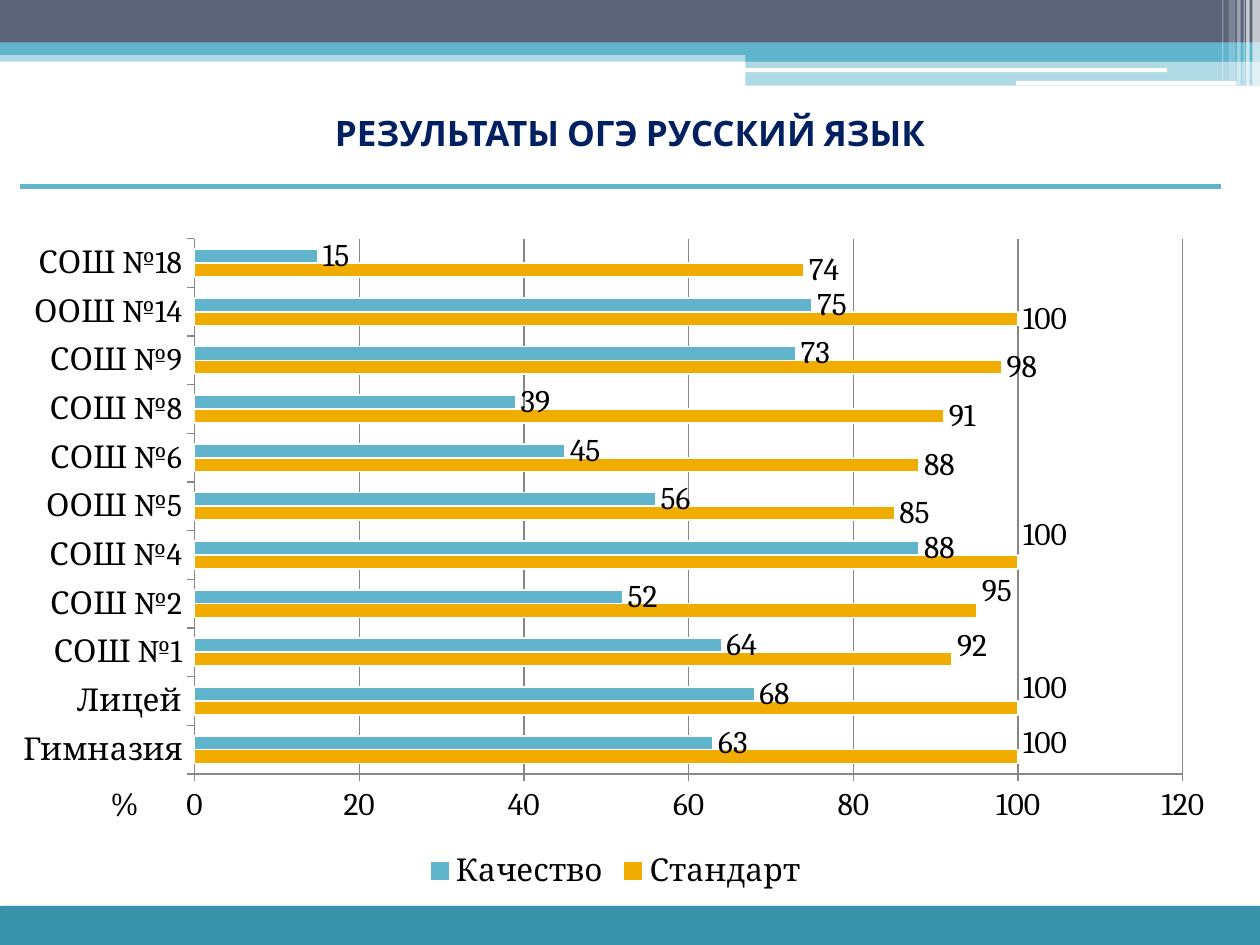
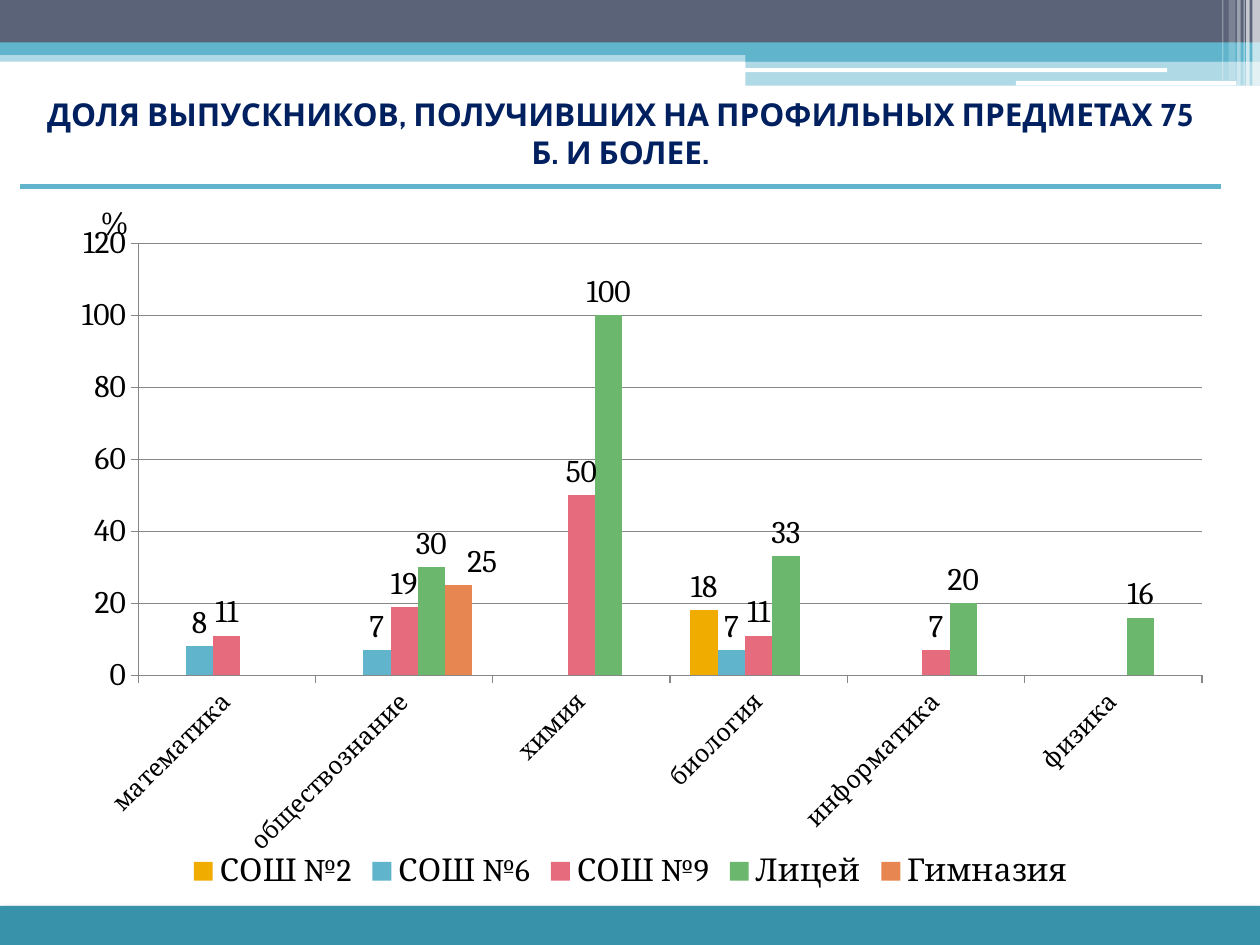
from pptx import Presentation
from pptx.chart.data import CategoryChartData
from pptx.enum.chart import XL_CHART_TYPE, XL_LABEL_POSITION, XL_LEGEND_POSITION, XL_TICK_MARK
from pptx.enum.shapes import MSO_CONNECTOR, MSO_SHAPE
from pptx.enum.text import MSO_ANCHOR, MSO_AUTO_SIZE, PP_ALIGN
from pptx.dml.color import RGBColor
from pptx.oxml import parse_xml
from pptx.oxml.ns import nsdecls, qn
from pptx.util import Pt

WHITE, BLACK, NAVY, GRAY = "FFFFFF", "000000", "002060", "878787"
SLATE, AQUA, TEAL = "5A6378", "60B5CC", "3792AA"
AMBER, PINK, GREEN, ORANGE = "F0AD00", "E66C7D", "6BB76D", "E88651"
TITLE_FONT, CHART_FONT = "Cabin", "Cambria"


def paint(fill, color):
    fill.solid()
    fill.fore_color.rgb = RGBColor.from_string(color)


def manual_layout(inner=False, **places):
    parts = '<c:layoutTarget val="inner"/><c:xMode val="edge"/><c:yMode val="edge"/>' if inner else ""
    parts += "".join(f'<c:{name} val="{value}"/>' for name, value in places.items())
    return parse_xml(f'<c:layout {nsdecls("c")}><c:manualLayout>{parts}</c:manualLayout></c:layout>')


deck = Presentation()
deck.slide_width, deck.slide_height = Pt(720), Pt(540)
title_only = deck.slide_layouts[5]

bands = [
    (MSO_SHAPE.RECTANGLE, 0, 28.8, 720, 6.5, AQUA, 50),
    (MSO_SHAPE.RECTANGLE, 0, 0, 720, 24.5, SLATE, 100),
    (MSO_SHAPE.RECTANGLE, 0, 24.2, 720, 7.2, AQUA, 100),
    (MSO_SHAPE.RECTANGLE, 426, 28, 294, 7.2, AQUA, 100),
    (MSO_SHAPE.RECTANGLE, 426, 35, 294, 14, AQUA, 50),
    (MSO_SHAPE.ROUNDED_RECTANGLE, 425.5, 39, 241.5, 2.2, WHITE, 100),
    (MSO_SHAPE.ROUNDED_RECTANGLE, 580.5, 46.2, 126, 2.6, WHITE, 100),
    (MSO_SHAPE.RECTANGLE, 0, 517.7, 720, 22.3, TEAL, 100),
]
strips = [(715.7, 4.3, 49, 65), (712.1, 2, 49, 65), (710.6, 0.7, 49, 60),
          (707, 2, 49, 40), (702, 4, 46, 20), (698.4, 0.7, 46, 30)]
bands[7:7] = [(MSO_SHAPE.RECTANGLE, left, 0, width, height, WHITE, alpha)
              for left, width, height, alpha in strips]

schools = ["Гимназия", "Лицей", "СОШ №1", "СОШ №2", "СОШ №4", "ООШ №5",
           "СОШ №6", "СОШ №8", "СОШ №9", "ООШ №14", "СОШ №18"]
subjects = ["математика", "обществознание", "химия", "биология", "информатика", "физика"]

slides = [
    {
        "title": "РЕЗУЛЬТАТЫ ОГЭ РУССКИЙ ЯЗЫК",
        "title_size": 20,
        "title_place": (0, 34, 720, 84),
        "kind": XL_CHART_TYPE.BAR_CLUSTERED,
        "chart_place": (0, 129.6, 703.4, 382.3),
        "plot": {"x": 0.158, "y": 0.018, "w": 0.803, "h": 0.8},
        "category_size": 18,
        "categories": schools,
        "series": [
            ("Стандарт", AMBER, [100, 100, 92, 95, 100, 85, 88, 91, 98, 100, 74]),
            ("Качество", AQUA, [63, 68, 64, 52, 88, 56, 45, 39, 73, 75, 15]),
        ],
        "moved_labels": [(0, 0, 0, -0.02), (0, 1, 0, -0.03), (0, 2, 0, -0.02),
                         (0, 3, 0, -0.03), (0, 4, 0, -0.04)],
        "percent_place": (56.2, 444.2, 28, 29),
    },
    {
        "title": "ДОЛЯ ВЫПУСКНИКОВ, ПОЛУЧИВШИХ НА ПРОФИЛЬНЫХ ПРЕДМЕТАХ 75 Б. И БОЛЕЕ.",
        "title_size": 18,
        "title_place": (11.5, 34, 686, 84),
        "kind": XL_CHART_TYPE.COLUMN_CLUSTERED,
        "chart_place": (22.3, 106.6, 675.4, 405.4),
        "plot": {"x": 0.084, "y": 0.08, "w": 0.9, "h": 0.609},
        "category_size": 14,
        "categories": subjects,
        "series": [
            ("СОШ №2", AMBER, [None, None, None, 18, None, None]),
            ("СОШ №6", AQUA, [8, 7, None, 7, None, None]),
            ("СОШ №9", PINK, [11, 19, 50, 11, 7, None]),
            ("Лицей", GREEN, [None, 30, 100, 33, 20, 16]),
            ("Гимназия", ORANGE, [None, 25, None, None, None, None]),
        ],
        "moved_labels": [(4, 1, 0.02, 0)],
        "percent_place": (50.4, 112.3, 40, 29),
    },
]

for content in slides:
    page = deck.slides.add_slide(title_only)

    if len(deck.slides) == 1:
        for number, (preset, left, top, width, height, color, alpha) in enumerate(bands):
            band = page.shapes.add_shape(preset, Pt(left), Pt(top), Pt(width), Pt(height))
            band.shadow.inherit = False
            band.line.fill.background()
            paint(band.fill, color)
            if alpha < 100:
                tint = band.element.xpath("./p:spPr/a:solidFill/a:srgbClr")[0]
                tint.append(parse_xml(f'<a:alpha {nsdecls("a")} val="{alpha * 1000}"/>'))
            if color == TEAL:
                band.element.spPr.find(qn("a:effectLst")).append(parse_xml(
                    f'<a:outerShdw {nsdecls("a")} blurRad="{Pt(4)}" dist="{Pt(2)}" dir="5400000">'
                    f'<a:srgbClr val="{BLACK}"><a:alpha val="45000"/></a:srgbClr></a:outerShdw>'))
            band.element.nvSpPr.cNvPr.id = 20 + number
            deck.slide_master.shapes.element.append(band.element)

    rule = page.shapes.add_connector(MSO_CONNECTOR.STRAIGHT, Pt(11.5), Pt(106.6), Pt(697.7), Pt(106.6))
    paint(rule.line.fill, AQUA)
    rule.line.width = Pt(3)
    rule.element.spPr.append(parse_xml(f'<a:effectLst {nsdecls("a")}/>'))

    title = page.shapes.title
    title.left, title.top, title.width, title.height = map(Pt, content["title_place"])
    title.text_frame.text = content["title"]
    title.text_frame.auto_size = MSO_AUTO_SIZE.NONE
    title.text_frame.vertical_anchor = MSO_ANCHOR.MIDDLE
    para = title.text_frame.paragraphs[0]
    para.alignment = PP_ALIGN.CENTER
    span = para.runs[0]
    span.font.name, span.font.size, span.font.bold = TITLE_FONT, Pt(content["title_size"]), True
    paint(span.font.fill, NAVY)

    data = CategoryChartData()
    data.categories = content["categories"]
    for name, color, values in content["series"]:
        data.add_series(name, values)
    chart = page.shapes.add_chart(content["kind"], *map(Pt, content["chart_place"]), data).chart
    chart.has_title = False
    chart.font.name, chart.font.size = CHART_FONT, Pt(18)
    paint(chart.font.fill, BLACK)
    chart.has_legend = True
    chart.legend.position = XL_LEGEND_POSITION.BOTTOM
    chart.legend.include_in_layout = False

    plot_area = chart.element.xpath("./c:chart/c:plotArea")[0]
    for automatic in plot_area.findall(qn("c:layout")):
        plot_area.remove(automatic)
    plot_area.insert(0, manual_layout(inner=True, **content["plot"]))

    for axis in (chart.category_axis, chart.value_axis):
        axis.major_tick_mark = XL_TICK_MARK.OUTSIDE
        axis.minor_tick_mark = XL_TICK_MARK.NONE
        paint(axis.format.line.fill, GRAY)
        axis.format.line.width = Pt(0.75)
    chart.category_axis.tick_labels.font.size = Pt(content["category_size"])
    chart.value_axis.minimum_scale = 0
    chart.value_axis.maximum_scale = 120
    chart.value_axis.major_unit = 20
    gridline = chart.value_axis.major_gridlines.format.line
    paint(gridline.fill, GRAY)
    gridline.width = Pt(0.75)

    plot = chart.plots[0]
    plot.vary_by_categories = False
    plot.gap_width, plot.overlap = 150, 0
    for series, (name, color, values) in zip(plot.series, content["series"]):
        paint(series.format.fill, color)
        series.data_labels.show_value = True
        series.data_labels.position = XL_LABEL_POSITION.OUTSIDE_END
        if content["kind"] == XL_CHART_TYPE.BAR_CLUSTERED:
            paint(series.format.line.fill, WHITE)
            series.format.line.width = Pt(1)
    if content["kind"] == XL_CHART_TYPE.COLUMN_CLUSTERED:
        chart.element.xpath(".//c:catAx/c:txPr/a:bodyPr")[0].set("rot", "-2700000")

    for series_index, point_index, shift_x, shift_y in content["moved_labels"]:
        label = plot.series[series_index].points[point_index].data_label
        label.font.name, label.font.size = CHART_FONT, Pt(18)
        label.position = XL_LABEL_POSITION.OUTSIDE_END
        index = chart.element.xpath(
            f'.//c:ser[c:idx/@val="{series_index}"]//c:dLbl/c:idx[@val="{point_index}"]')[0]
        index.addnext(manual_layout(x=shift_x, y=shift_y))

    box = page.shapes.add_textbox(*map(Pt, content["percent_place"]))
    box.text_frame.text = "%"
    box.text_frame.word_wrap = False
    span = box.text_frame.paragraphs[0].runs[0]
    span.font.name, span.font.size = CHART_FONT, Pt(18)
    paint(span.font.fill, BLACK)

deck.save("out.pptx")
